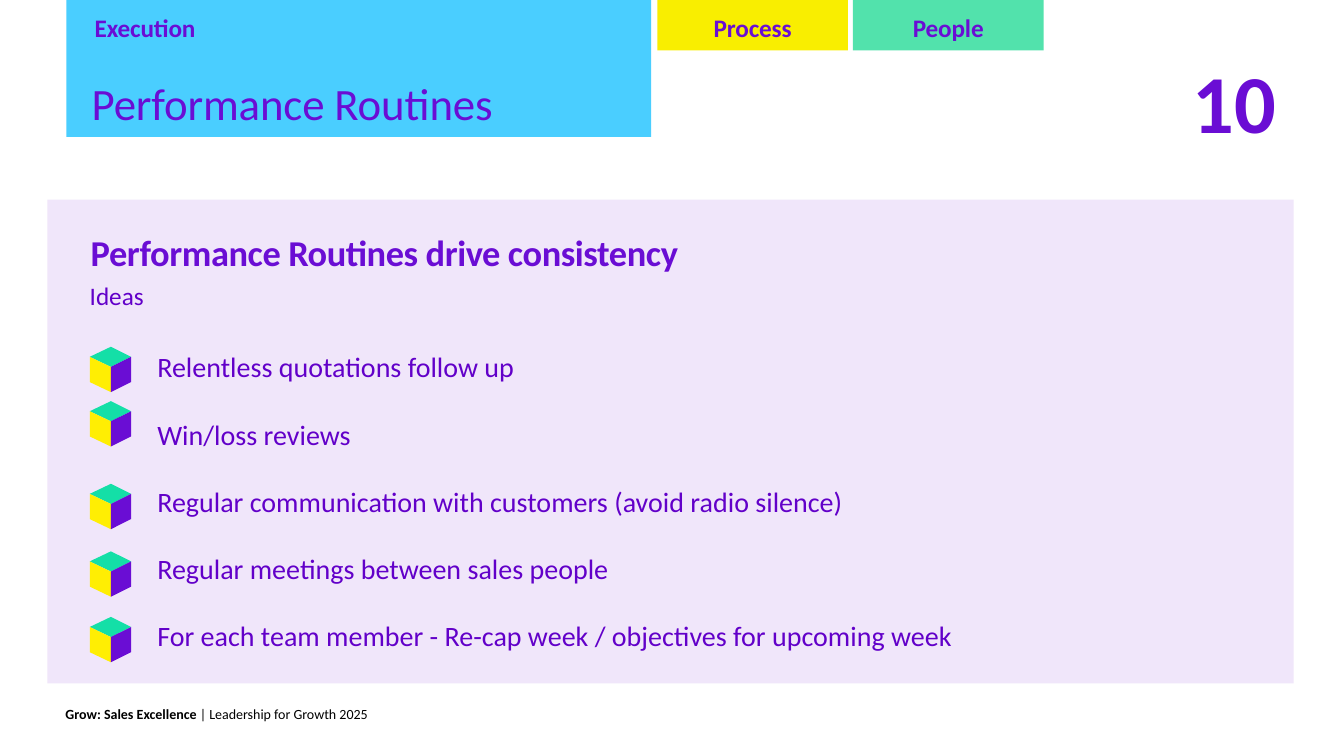
from pptx import Presentation
from pptx import util as u
from pptx.dml import color
from pptx.enum import shapes, text
from lxml import etree

PURPLE, TEXT, BLACK = "6A0DD4", "6200C9", "000000"
FACES = (
    ("14DFA7", ((0.21, 0), (0, 0.1), (0.21, 0.2), (0.41, 0.1))),
    ("FFEE03", ((0, 0.1), (0, 0.35), (0.21, 0.45), (0.21, 0.2))),
    (PURPLE, ((0.41, 0.1), (0.21, 0.2), (0.21, 0.45), (0.41, 0.35))),
)
IDEAS = (
    "Relentless quotations follow up",
    "Win/loss reviews",
    "Regular communication with customers (avoid radio silence)",
    "Regular meetings between sales people",
    "For each team member - Re-cap week / objectives for upcoming week",
)
CUBES = (3.44, 3.98, 4.8, 5.47, 6.12)


def assign(item, **values):
    for name, value in values.items():
        setattr(item, name, value)


def rgb(code):
    return color.RGBColor.from_string(code)


def paint(shape, code):
    shape.shadow.inherit = False
    shape.fill.solid()
    shape.fill.fore_color.rgb = rgb(code)
    shape.line.fill.background()


def place(shape, box):
    for name, value in zip(("left", "top", "width", "height"), box):
        setattr(shape, name, u.Inches(value))


def setup(shape, pad=(0, 0, 0, 0), anchor=text.MSO_ANCHOR.TOP):
    frame = shape.text_frame
    assign(frame, word_wrap=True, auto_size=text.MSO_AUTO_SIZE.NONE,
           vertical_anchor=anchor)
    for side, value in zip(("left", "top", "right", "bottom"), pad):
        setattr(frame, "margin_" + side, u.Inches(value))
    return frame


def write(para, words, size, code=PURPLE, bold=False, track=0,
          align=text.PP_ALIGN.LEFT, after=0):
    assign(para, alignment=align, space_before=u.Pt(0), space_after=u.Pt(after))
    run = para.add_run()
    run.text = words
    assign(run.font, name="Calibri", size=u.Pt(size), bold=bold)
    run.font.color.rgb = rgb(code)
    if track:
        run._r.get_or_add_rPr().set("spc", str(round(track * 100)))


def block(slide, box, code):
    shape = slide.shapes.add_shape(
        shapes.MSO_SHAPE.RECTANGLE, *map(u.Inches, box))
    paint(shape, code)
    return shape


def tab(slide, box, code, words, align=text.PP_ALIGN.CENTER, left=0):
    frame = setup(block(slide, box, code), (left, 0.12, 0, 0.08))
    write(frame.paragraphs[0], words, 18, bold=True, track=-0.1, align=align)


def label(slide, box, words, size, pad=(0, 0.01, 0, 0), **style):
    frame = setup(slide.shapes.add_textbox(*map(u.Inches, box)), pad)
    write(frame.paragraphs[0], words, size, **style)


def raise_up(shape):
    shape.element.getparent().append(shape.element)


def heading(slide):
    title = slide.shapes.title
    place(title, (0.91, 0.75, 5.5, 0.55))
    raise_up(title)
    write(setup(title).paragraphs[0], "Performance Routines", 32, track=-0.1)


def ideas(slide):
    body = slide.placeholders[1]
    place(body, (1.46, 3.42, 10.93, 3.51))
    raise_up(body)
    frame = setup(body, (0.1, 0.05, 0.1, 0.05))
    for i, words in enumerate(IDEAS):
        para = frame.add_paragraph() if i else frame.paragraphs[0]
        props = para._p.get_or_add_pPr()
        props.set("marL", "0")
        props.set("indent", "0")
        etree.SubElement(
            props, "{http://schemas.openxmlformats.org/drawingml/2006/main}buNone")
        write(para, words, 20, TEXT, after=24)


def cube(slide, left, top):
    group = slide.shapes.add_group_shape()
    for code, face in FACES:
        spots = [(u.Inches(left + x), u.Inches(top + y)) for x, y in face]
        form = group.shapes.build_freeform(*spots[0])
        form.add_line_segments(spots[1:], close=True)
        paint(form.convert_to_shape(), code)


def footer(slide):
    box = slide.shapes.add_textbox(*map(u.Inches, (0.65, 7, 4.27, 0.17)))
    para = setup(box, anchor=text.MSO_ANCHOR.MIDDLE).paragraphs[0]
    write(para, "Grow: Sales Excellence ", 10, BLACK, bold=True)
    write(para, "| Leadership for Growth 2025", 10, BLACK)


def main():
    deck = Presentation()
    assign(deck, slide_width=u.Inches(13.33), slide_height=u.Inches(7.5))
    slide = deck.slides.add_slide(deck.slide_layouts[1])
    block(slide, (0.47, 1.98, 12.36, 4.8), "F0E6FA")
    ideas(slide)
    label(slide, (11.83, 0.5, 0.92, 1), "10", 58.8, bold=True, track=-0.1)
    tab(slide, (0.66, 0, 5.8, 1.36), "4ACEFF", "Execution",
        text.PP_ALIGN.LEFT, 0.28)
    heading(slide)
    tab(slide, (6.52, 0, 1.89, 0.5), "F9EE00", "Process")
    tab(slide, (8.46, 0, 1.89, 0.5), "52E2AC", "People")
    footer(slide)
    label(slide, (0.89, 2.73, 6.47, 0.4), "Ideas", 18, (0, 0.05, 0, 0.05),
          code=TEXT)
    label(slide, (0.89, 2.27, 9.83, 0.45),
          "Performance Routines drive consistency", 26, (0.01, 0.01, 0, 0),
          bold=True, track=-0.3)
    for top in CUBES:
        cube(slide, 0.89, top)
    deck.save("out.pptx")


if __name__ == "__main__":
    main()
